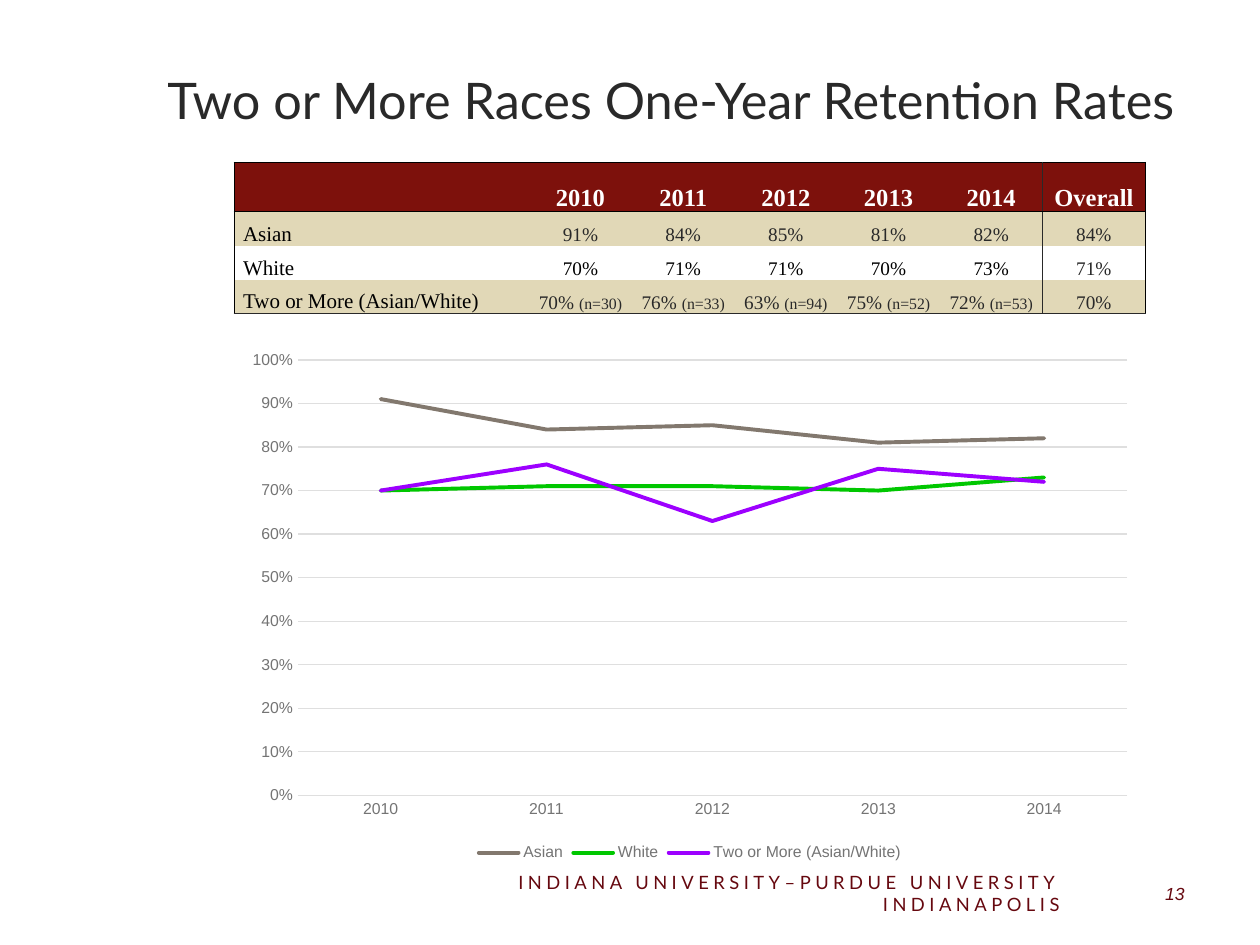
from dataclasses import dataclass
from lxml import etree
from pptx import Presentation
from pptx.chart.data import CategoryChartData
from pptx.dml.color import RGBColor
from pptx.enum.chart import XL_CHART_TYPE as ChartType, XL_LEGEND_POSITION as LegendPosition
from pptx.enum.chart import XL_TICK_MARK as TickMark
from pptx.enum.text import MSO_ANCHOR as Anchor, PP_ALIGN as Align
from pptx.oxml import parse_xml
from pptx.oxml.ns import nsdecls, qn
from pptx.util import Pt


@dataclass(frozen=True)
class Theme:
    dark: str = "292929"
    black: str = "000000"
    white: str = "FFFFFF"
    maroon: str = "66080F"
    header: str = "7D110C"
    sand: str = "E1D8B7"
    axis: str = "747474"
    grid: str = "DFDFDF"
    series: tuple = ("82786E", "00C700", "9D00FF")
    sans: str = "Lato"
    plain: str = "Arial"
    serif: str = "Times New Roman"
    title_size: float = 28.8
    footer_size: float = 10.5
    number_size: float = 10
    head_size: float = 14
    label_size: float = 12
    value_size: float = 11
    note_size: float = 9
    chart_size: float = 9


theme = Theme()


def style(font, name, size, color):
    font.name = name
    font.size = Pt(size)
    font.color.rgb = RGBColor.from_string(color)


def add_text(left, top, width, height, text, name, size, color, align):
    box = slide.shapes.add_textbox(Pt(left), Pt(top), Pt(width), Pt(height))
    frame = box.text_frame
    frame.word_wrap = True
    frame.vertical_anchor = Anchor.MIDDLE
    frame.text = text
    paragraph = frame.paragraphs[0]
    paragraph.alignment = align
    run = paragraph.runs[0]
    style(run.font, name, size, color)
    return run


presentation = Presentation()
presentation.slide_width = Pt(720)
presentation.slide_height = Pt(540)
slide = presentation.slides.add_slide(presentation.slide_layouts[6])

title = add_text(88.56, 21.6, 624.24, 69.84, "Two or More Races One-Year Retention Rates",
                 theme.sans, theme.title_size, theme.dark, Align.LEFT)
shadow = parse_xml(
    f'<a:effectLst {nsdecls("a")}><a:outerShdw blurRad="38100" dist="38100" dir="2700000">'
    f'<a:srgbClr val="{theme.black}"><a:alpha val="43000"/></a:srgbClr>'
    '</a:outerShdw></a:effectLst>')
title.font.fill._xPr.find(qn("a:solidFill")).addnext(shadow)

footer = add_text(264.96, 496.08, 347.76, 28.8,
                  "INDIANA UNIVERSITY–PURDUE UNIVERSITY INDIANAPOLIS",
                  theme.sans, theme.footer_size, theme.maroon, Align.RIGHT)
footer._r.get_or_add_rPr().set("spc", "260")
number = add_text(619.2, 496.08, 64.8, 28.8, "13",
                  theme.plain, theme.number_size, theme.maroon, Align.RIGHT)
number.font.italic = True

years = ["2010", "2011", "2012", "2013", "2014"]
rates = {
    "Asian": [91, 84, 85, 81, 82],
    "White": [70, 71, 71, 70, 73],
    "Two or More (Asian/White)": [70, 76, 63, 75, 72],
}
overall = [84, 71, 70]
counts = [30, 33, 94, 52, 53]

rows = [["", *years, "Overall"]]
for (group, values), total in zip(rates.items(), overall):
    rows.append([group, *[f"{value}%" for value in values], f"{total}%"])
last_row = len(rows) - 1
last_column = len(rows[0]) - 1

table = slide.shapes.add_table(len(rows), len(rows[0]), Pt(133.92), Pt(92.88),
                               Pt(520.56), Pt(86.4)).table
for index, column in enumerate(table.columns):
    column.width = Pt(168.48 if index == 0 else 58.68)
for index, row in enumerate(table.rows):
    row.height = Pt(28.08 if index == 0 else 19.44)

for r, texts in enumerate(rows):
    for c, text in enumerate(texts):
        cell = table.cell(r, c)
        cell.margin_left = cell.margin_right = Pt(5)
        cell.margin_top = cell.margin_bottom = 0
        cell.vertical_anchor = Anchor.BOTTOM
        edges = {
            "lnL": {0: theme.black, last_column: theme.dark}.get(c),
            "lnR": {last_column - 1: theme.dark, last_column: theme.black}.get(c),
            "lnT": theme.black if r < 2 else None,
            "lnB": {0: theme.black, last_row: theme.dark}.get(r),
        }
        properties = cell._tc.get_or_add_tcPr()
        for tag, color in edges.items():
            line = etree.SubElement(properties, qn(f"a:{tag}"), w=str(Pt(1)))
            if color:
                fill = etree.SubElement(line, qn("a:solidFill"))
                etree.SubElement(fill, qn("a:srgbClr"), val=color)
            else:
                etree.SubElement(line, qn("a:noFill"))
        cell.fill.solid()
        background = theme.header if r == 0 else (theme.white, theme.sand)[r % 2]
        cell.fill.fore_color.rgb = RGBColor.from_string(background)

        paragraph = cell.text_frame.paragraphs[0]
        paragraph.text = text
        paragraph.line_spacing = 1.07
        paragraph.alignment = Align.LEFT if c == 0 else Align.CENTER
        if r == 0:
            size, color = theme.head_size, theme.white
        elif c == 0:
            size, color = theme.label_size, theme.black
        else:
            size = theme.value_size
            color = theme.black if r == 2 and c < last_column else theme.dark
        for run in paragraph.runs:
            style(run.font, theme.serif, size, color)
            run.font.bold = r == 0
        if r == last_row and 0 < c < last_column:
            paragraph.runs[0].text = f"{text} "
            note = paragraph.add_run()
            note.text = f"(n={counts[c - 1]})"
            style(note.font, theme.serif, theme.note_size, color)
            note.font.bold = False

chart_data = CategoryChartData(number_format="0%")
chart_data.categories = years
for group, values in rates.items():
    chart_data.add_series(group, [value / 100 for value in values])
chart = slide.shapes.add_chart(ChartType.LINE, Pt(133.92), Pt(194.4), Pt(520.56), Pt(300.96),
                               chart_data).chart
style(chart.font, theme.plain, theme.number_size, theme.dark)
chart.has_title = False
chart.has_legend = True
chart.legend.position = LegendPosition.BOTTOM
chart.legend.include_in_layout = False
style(chart.legend.font, theme.plain, theme.chart_size, theme.axis)

for axis in (chart.category_axis, chart.value_axis):
    axis.major_tick_mark = axis.minor_tick_mark = TickMark.NONE
    style(axis.tick_labels.font, theme.plain, theme.chart_size, theme.axis)
value_axis = chart.value_axis
value_axis.minimum_scale = 0
value_axis.maximum_scale = 1
value_axis.major_unit = 0.1
value_axis.tick_labels.number_format = "0%"
value_axis.tick_labels.number_format_is_linked = False
value_axis.format.line.fill.background()
for line in (chart.category_axis.format.line, value_axis.major_gridlines.format.line):
    line.color.rgb = RGBColor.from_string(theme.grid)
    line.width = Pt(0.75)

chart.plots[0].vary_by_categories = False
for series, color in zip(chart.plots[0].series, theme.series):
    series.smooth = False
    series.format.line.color.rgb = RGBColor.from_string(color)
    series.format.line.width = Pt(2.25)
    series.format.line._get_or_add_ln().set("cap", "rnd")

presentation.save("out.pptx")
